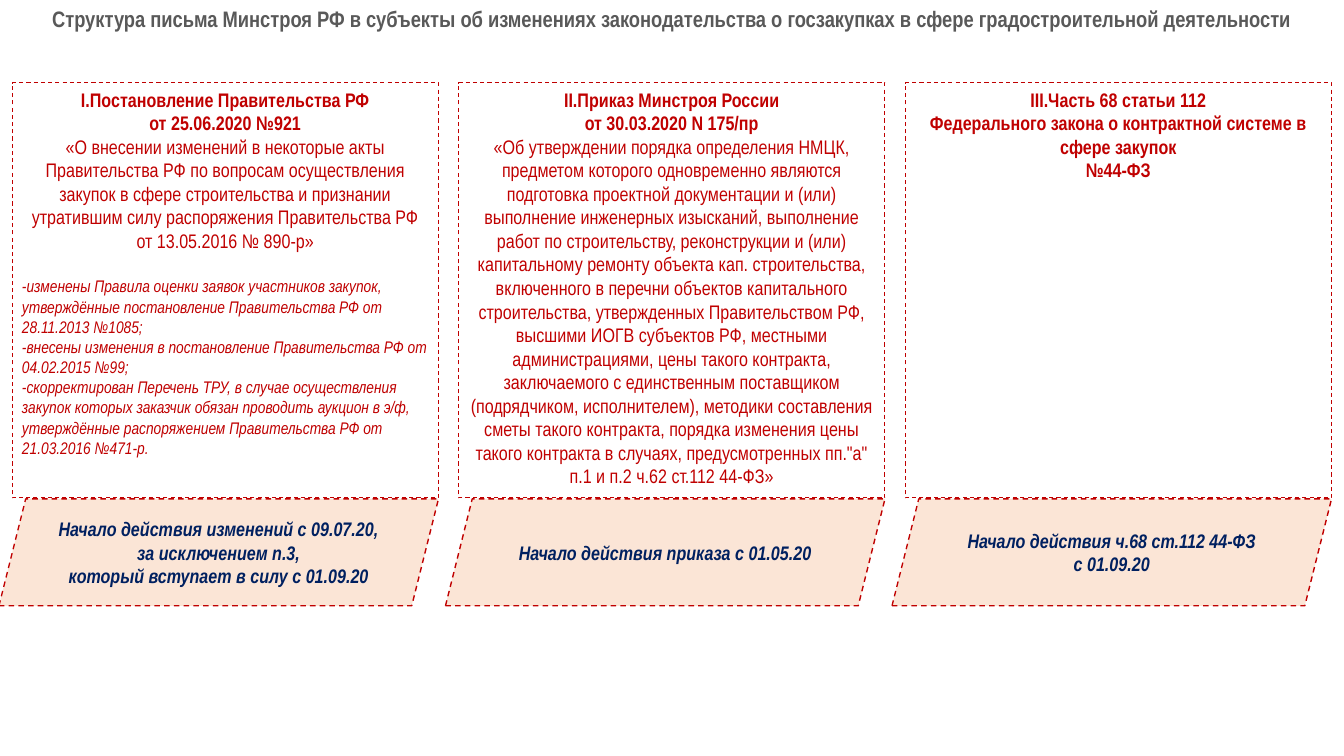
"""Builds a slide on the structure of a letter about procurement law changes."""
from pptx import Presentation
from pptx.dml.color import RGBColor
from pptx.enum.dml import MSO_LINE
from pptx.enum.shapes import MSO_SHAPE
from pptx.enum.text import MSO_ANCHOR, PP_ALIGN
from pptx.util import Pt

TITLE = "Структура письма Минстроя РФ в субъекты об изменениях законодательства о госзакупках в сфере градостроительной деятельности"
ACTS = [
    {
        "head": ["I.Постановление Правительства РФ", "от 25.06.2020 №921"],
        "body": [
            "«О внесении изменений в некоторые акты Правительства РФ по вопросам осуществления закупок в сфере строительства и признании утратившим силу распоряжения Правительства РФ",
            "от 13.05.2016 № 890-р»",
        ],
        "notes": [
            "-изменены Правила оценки заявок участников закупок, утверждённые постановление Правительства РФ от 28.11.2013 №1085;",
            "-внесены изменения в постановление Правительства РФ от 04.02.2015 №99;",
            "-скорректирован Перечень ТРУ, в случае осуществления закупок которых заказчик обязан проводить аукцион в э/ф, утверждённые распоряжением Правительства РФ от 21.03.2016 №471-р.",
        ],
        "start": ["Начало действия изменений с 09.07.20,", "за исключением п.3,", "который вступает в силу с 01.09.20"],
    },
    {
        "head": ["II.Приказ Минстроя России", "от 30.03.2020 N 175/пр"],
        "body": [
            "«Об утверждении порядка определения НМЦК, предметом которого одновременно являются подготовка проектной документации и (или) выполнение инженерных изысканий, выполнение работ по строительству, реконструкции и (или) капитальному ремонту объекта кап. строительства, включенного в перечни объектов капитального строительства, утвержденных Правительством РФ, высшими ИОГВ субъектов РФ, местными администрациями, цены такого контракта, заключаемого с единственным поставщиком (подрядчиком, исполнителем), методики составления сметы такого контракта, порядка изменения цены такого контракта в случаях, предусмотренных пп.\"а\" п.1 и п.2 ч.62 ст.112 44-ФЗ»",
        ],
        "notes": [],
        "start": ["Начало действия приказа с 01.05.20"],
    },
    {
        "head": [
            "III.Часть 68 статьи 112",
            "Федерального закона о контрактной системе в сфере закупок",
            "№44-ФЗ",
        ],
        "body": [],
        "notes": [],
        "start": ["Начало действия ч.68 ст.112 44-ФЗ", "с 01.09.20"],
    },
]
THEME = {
    "font": "Arial Narrow",
    "gray": RGBColor(0x59, 0x59, 0x59),
    "red": RGBColor(0xC0, 0x00, 0x00),
    "navy": RGBColor(0x00, 0x20, 0x60),
    "peach": RGBColor(0xFB, 0xE5, 0xD6),
    "title": 16,
    "text": 14,
    "note": 12,
}
LEFT, TOP, PITCH = 8.64, 59.04, 318.96
WIDTH, HEIGHT = 304.56, 296.64
BAND_TOP, BAND_W, BAND_H = 356.4, 313.92, 76.32
NOTE_GAP = 17


def write(frame, lines, size, color, bold=False, italic=False, align=PP_ALIGN.CENTER, gap=0):
    for i, line in enumerate(lines):
        para = frame.paragraphs[0]
        if para.text:
            para = frame.add_paragraph()
        para.text = line
        para.alignment = align
        para.space_before = Pt(0 if i else gap)
        font = para.font
        font.name, font.size = THEME["font"], Pt(THEME[size])
        font.bold, font.italic = bold, italic
        font.color.rgb = THEME[color]


def draw(slide, kind, left, top, width, height, weight, anchor, fill=None):
    shape = slide.shapes.add_shape(kind, Pt(left), Pt(top), Pt(width), Pt(height))
    shape.shadow.inherit = False
    if fill:
        shape.fill.solid()
        shape.fill.fore_color.rgb = THEME[fill]
    else:
        shape.fill.background()
    shape.line.color.rgb = THEME["red"]
    shape.line.width = Pt(weight)
    shape.line.dash_style = MSO_LINE.DASH
    frame = shape.text_frame
    frame.word_wrap, frame.vertical_anchor = True, anchor
    return frame


def main():
    deck = Presentation()
    deck.slide_width, deck.slide_height = Pt(960), Pt(540)
    slide = deck.slides.add_slide(deck.slide_layouts[6])
    title = slide.shapes.add_textbox(Pt(0), Pt(0), Pt(960), Pt(45)).text_frame
    title.word_wrap, title.margin_top = True, Pt(6)
    write(title, [TITLE], "title", "gray", bold=True)
    title.paragraphs[0].line_spacing = 0.9
    for i, act in enumerate(ACTS):
        left = LEFT + i * PITCH
        box = draw(slide, MSO_SHAPE.RECTANGLE, left, TOP, WIDTH, HEIGHT, 0.75, MSO_ANCHOR.TOP)
        write(box, act["head"], "text", "red", bold=True)
        write(box, act["body"], "text", "red")
        write(box, act["notes"], "note", "red", italic=True, align=PP_ALIGN.LEFT, gap=NOTE_GAP)
        band = draw(slide, MSO_SHAPE.PARALLELOGRAM, left + WIDTH - BAND_W, BAND_TOP,
                    BAND_W, BAND_H, 1, MSO_ANCHOR.MIDDLE, "peach")
        write(band, act["start"], "text", "navy", bold=True, italic=True)
    deck.save("out.pptx")


if __name__ == "__main__":
    main()
